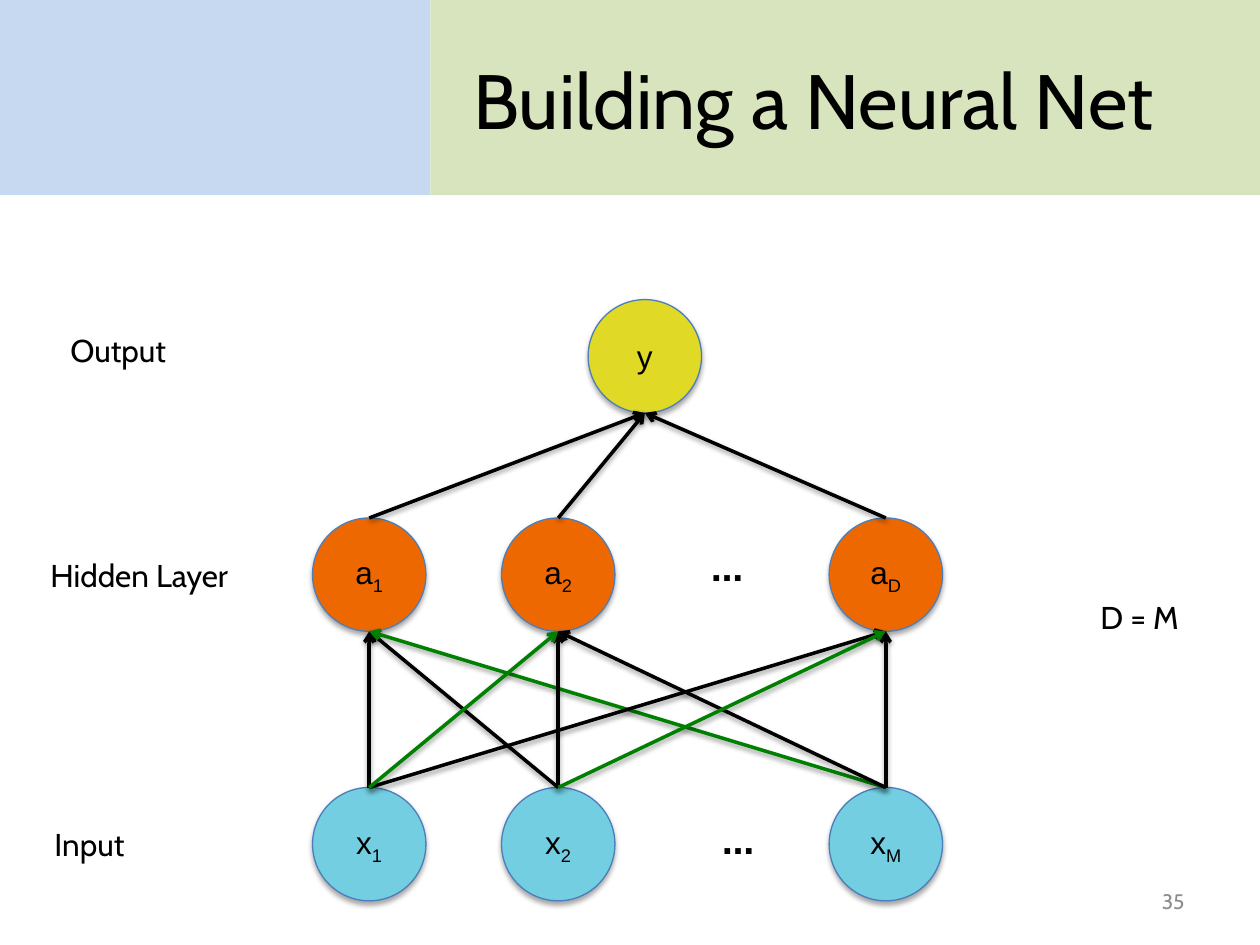
from dataclasses import dataclass

from lxml.etree import SubElement
from pptx import Presentation
from pptx.dml.color import RGBColor as Color
from pptx.enum.shapes import MSO_CONNECTOR as Link, MSO_SHAPE as Kind
from pptx.enum.text import MSO_ANCHOR as Anchor, PP_ALIGN as Align
from pptx.oxml import parse_xml
from pptx.oxml.ns import nsdecls, qn
from pptx.util import Pt


@dataclass(frozen=True)
class Theme:
    black: str = "000000"
    green: str = "008000"
    grey: str = "8C8C8C"
    rim: str = "4B7EBC"
    blue: str = "C6D9F1"
    lime: str = "D7E4BD"
    input: str = "72CEE0"
    hidden: str = "EE6802"
    output: str = "E0D925"
    sans: str = "Cabin"
    plain: str = "Arial"
    head: int = 44
    dots: int = 26
    body: int = 18
    small: int = 12


def write(frame, text, sub="", size=18, font="Cabin", color="000000",
          bold=False, align=Align.CENTER, anchor=Anchor.TOP, edge=False):
    frame.word_wrap = True
    frame.vertical_anchor = anchor
    para = frame.paragraphs[0]
    para.alignment = align
    for part, base in ((text, None), (sub, "-25000")):
        if not part:
            continue
        run = para.add_run()
        run.text = part
        run.font.size = Pt(size)
        run.font.name = font
        run.font.bold = bold
        run.font.color.rgb = Color.from_string(color)
        props = run.font._element
        if base:
            props.set("baseline", base)
        if edge:
            props.insert(0, parse_xml(
                f'<a:ln {nsdecls("a")} w="9525"><a:solidFill>'
                f'<a:srgbClr val="{color}"/></a:solidFill></a:ln>'))


def shade(shape, dist, alpha):
    props = shape._element.spPr
    for old in props.findall(qn("a:effectLst")):
        props.remove(old)
    props.append(parse_xml(
        f'<a:effectLst {nsdecls("a")}><a:outerShdw blurRad="{Pt(3.1)}" '
        f'dist="{Pt(dist)}" dir="5400000" rotWithShape="0">'
        f'<a:srgbClr val="000000"><a:alpha val="{alpha}000"/></a:srgbClr>'
        '</a:outerShdw></a:effectLst>'))


class Board:
    def __init__(self, slide, theme):
        self.slide = slide
        self.theme = theme

    def shape(self, kind, box, fill):
        shape = self.slide.shapes.add_shape(kind, *map(Pt, box))
        shape.shadow.inherit = False
        shape.fill.solid()
        shape.fill.fore_color.rgb = Color.from_string(fill)
        return shape

    def band(self, box, fill):
        self.shape(Kind.RECTANGLE, box, fill).line.fill.background()

    def node(self, mid, top, fill, text, sub=""):
        box = (mid - SIZE / 2, top, SIZE, SIZE)
        node = self.shape(Kind.FLOWCHART_CONNECTOR, box, fill)
        node.line.color.rgb = Color.from_string(self.theme.rim)
        node.line.width = Pt(0.75)
        shade(node, 1.8, 35)
        write(node.text_frame, text, sub, size=self.theme.body,
              font=self.theme.plain, color=self.theme.black,
              anchor=Anchor.MIDDLE, edge=True)
        return node

    def arrow(self, high, low, color):
        mid = high.left + high.width // 2
        line = self.slide.shapes.add_connector(
            Link.STRAIGHT, mid, high.top + high.height, mid, low.top)
        line.end_connect(low, 0)
        line.line.color.rgb = Color.from_string(color)
        line.line.width = Pt(2)
        SubElement(line.line._get_or_add_ln(), qn("a:headEnd"), type="arrow")
        shade(line, 1.6, 38)

    def label(self, box, text, **style):
        frame = self.slide.shapes.add_textbox(*map(Pt, box)).text_frame
        write(frame, text, **{"font": self.theme.sans, "color": self.theme.black,
                              "size": self.theme.body, **style})


SIZE = 64.8
MIDS = (211, 319, 506.2)
PAIRS = "00 01 02 11 12 20 10 21 22"


def main():
    deck = Presentation()
    deck.slide_width, deck.slide_height = Pt(720), Pt(540)
    theme = Theme()
    board = Board(deck.slides.add_slide(deck.slide_layouts[6]), theme)

    board.band((0, 0, 246, 111.5), theme.blue)
    board.band((246, 0, 474, 111.5), theme.lime)
    board.label((246, 11.5, 438, 90), "Building a Neural Net",
                size=theme.head, anchor=Anchor.MIDDLE)

    lows = [board.node(mid, 450, theme.input, "x", sub)
            for mid, sub in zip(MIDS, "12M")]
    cores = [board.node(mid, 296, theme.hidden, "a", sub)
             for mid, sub in zip(MIDS, "12D")]
    goal = board.node(368.5, 171.2, theme.output, "y")

    for left, top in ((394.6, 302.4), (401, 458.6)):
        board.label((left, top, 41.8, 38.9), "…", size=theme.dots,
                    bold=True, anchor=Anchor.MIDDLE)

    for core, low in (map(int, pair) for pair in PAIRS.split()):
        color = theme.green if (core - low) % 3 == 1 else theme.black
        board.arrow(cores[core], lows[low], color)
    for core in cores:
        board.arrow(goal, core, theme.black)

    board.label((33.1, 185.8, 102.2, 29), "Output", align=Align.LEFT)
    for left, top, width, text in ((0, 468, 102.2, "Input"),
                                   (-1.4, 314, 162, "Hidden Layer"),
                                   (570.2, 338.4, 162, "D = M")):
        board.label((left, top, width, 29), text)
    board.label((516, 500.5, 168, 28.8), "35", size=theme.small,
                color=theme.grey, align=Align.RIGHT, anchor=Anchor.MIDDLE)

    deck.save("out.pptx")


if __name__ == "__main__":
    main()
